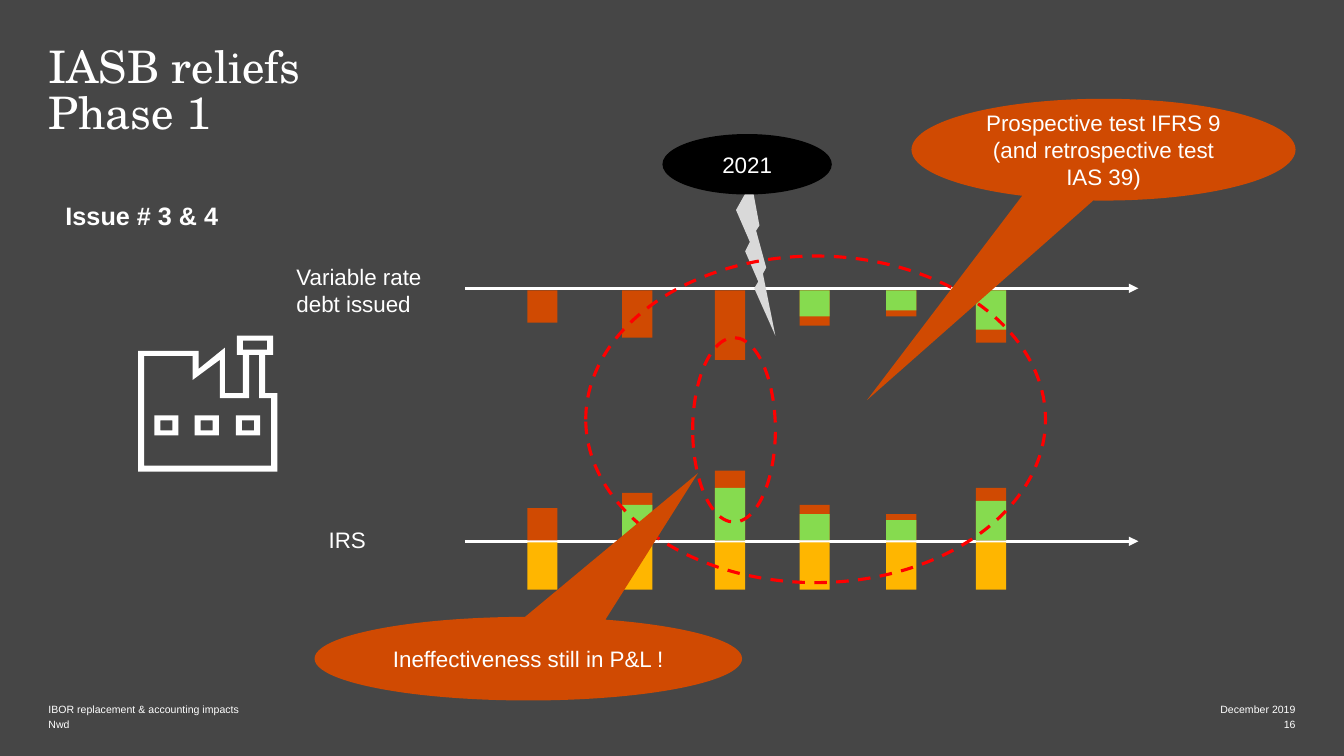
"""Build the slide on reliefs for hedges of variable rate debt."""
from dataclasses import dataclass
from typing import Optional

import pptx
import pptx.util
from lxml import etree
from pptx.dml.color import RGBColor
from pptx.enum.dml import MSO_LINE
from pptx.enum.shapes import MSO_CONNECTOR, MSO_SHAPE
from pptx.enum.text import MSO_ANCHOR, PP_ALIGN
from pptx.oxml.ns import qn
from pptx.util import Inches

WHITE, BLACK, GREY, BACKGROUND = "FFFFFF", "000000", "D9D9D9", "464646"
ORANGE, GREEN, YELLOW, RED = "D04A02", "86DB4F", "FFB600", "FF0000"
BAR_WIDTH = 0.3
DEBT_TOP, SWAP_BOTTOM, FLOATING_TOP, FLOATING_HEIGHT = 2.88, 5.36, 5.38, 0.47


@dataclass
class Box:
    left: float
    top: float
    width: float
    height: float

    def lengths(self) -> tuple:
        return tuple(Inches(v) for v in (self.left, self.top, self.width, self.height))


@dataclass
class Label:
    text: str
    box: Box
    size: float
    font: str = "Arial"
    bold: bool = False
    align: PP_ALIGN = PP_ALIGN.LEFT
    anchor: MSO_ANCHOR = MSO_ANCHOR.TOP
    spacing: float = 1.0


@dataclass
class Period:
    left: float
    cash_flow: float
    hedged_debt: float = 0
    hedged_swap: float = 0


@dataclass
class Bubble:
    text: str
    box: Box
    color: str
    tip: Optional[tuple] = None


def footer(text: str, left: float, top: float, width: float, align: PP_ALIGN) -> Label:
    return Label(text, Box(left, top, width, 0.15), 7.5, align=align, anchor=MSO_ANCHOR.BOTTOM)


LABELS = [
    Label("IASB reliefs\vPhase 1", Box(0.48, 0.47, 12.36, 1.52), 32, "TeX Gyre Schola", spacing=0.85),
    Label("Issue # 3 & 4", Box(0.65, 1.99, 2.73, 0.3), 18, bold=True),
    Label("Variable rate debt issued", Box(2.94, 2.61, 1.51, 0.54), 16),
    Label("IRS", Box(3.26, 5.22, 1.51, 0.27), 16),
    footer("IBOR replacement & accounting impacts", 0.48, 6.95, 5.99, PP_ALIGN.LEFT),
    footer("Nwd", 0.48, 7.1, 5.99, PP_ALIGN.LEFT),
    footer("December 2019", 10.92, 6.95, 1.93, PP_ALIGN.RIGHT),
    footer("16", 10.92, 7.1, 1.93, PP_ALIGN.RIGHT),
]
PERIODS = [
    Period(5.23, 0.32),
    Period(6.17, 0.47, hedged_swap=0.35),
    Period(7.09, 0.69, hedged_swap=0.52),
    Period(7.93, 0.35, 0.26, 0.26),
    Period(8.79, 0.26, 0.2, 0.2),
    Period(9.68, 0.52, 0.39, 0.39),
]
REFORM_DATE = Bubble("2021", Box(6.57, 1.33, 1.68, 0.6), BLACK)
PROSPECTIVE_TEST = Bubble("Prospective test IFRS 9 (and retrospective test IAS 39)",
                          Box(9.04, 0.98, 3.81, 1.01), ORANGE, (-0.616, 2.461))
INEFFECTIVENESS = Bubble("Ineffectiveness still in P&L !",
                         Box(3.12, 6.12, 4.24, 0.83), ORANGE, (0.397, -2.219))
WALLS = [(2.63, 3.9), (2.63, 3.52), (2.71, 3.52), (2.71, 3.33), (2.35, 3.33), (2.35, 3.52),
         (2.41, 3.52), (2.41, 3.9), (2.23, 3.9), (2.23, 3.45), (1.97, 3.66), (1.97, 3.48),
         (1.37, 3.48), (1.37, 4.68), (2.75, 4.68), (2.75, 3.9)]
INTERIOR = [(2.69, 4.62), (1.43, 4.62), (1.43, 3.53), (1.91, 3.53), (1.91, 3.77), (2.18, 3.57),
            (2.18, 3.95), (2.47, 3.95), (2.47, 3.52), (2.57, 3.52), (2.57, 3.95), (2.69, 3.95)]
WINDOW_LEFTS = (1.53, 1.93, 2.34)


def rgb(color: str) -> RGBColor:
    return RGBColor.from_string(color)


def add_label(slide, label: Label) -> None:
    frame = slide.shapes.add_textbox(*label.box.lengths()).text_frame
    frame.margin_left = frame.margin_right = frame.margin_top = frame.margin_bottom = 0
    frame.word_wrap = True
    frame.vertical_anchor = label.anchor
    frame.text = label.text
    paragraph = frame.paragraphs[0]
    paragraph.alignment = label.align
    paragraph.line_spacing = label.spacing
    set_font(paragraph, label.size, label.font, label.bold)


def set_font(paragraph, size: float, name: str = "Arial", bold: bool = False) -> None:
    paragraph.font.size = pptx.util.Pt(size)
    paragraph.font.name = name
    paragraph.font.bold = bold
    paragraph.font.color.rgb = rgb(WHITE)


def paint(shape, color: str) -> None:
    shape.shadow.inherit = False
    shape.fill.solid()
    shape.fill.fore_color.rgb = rgb(color)
    shape.line.fill.background()


def add_filled(slide, preset: MSO_SHAPE, box: Box, color: str):
    shape = slide.shapes.add_shape(preset, *box.lengths())
    paint(shape, color)
    return shape


def add_bubble(slide, bubble: Bubble) -> None:
    preset = MSO_SHAPE.OVAL_CALLOUT if bubble.tip else MSO_SHAPE.OVAL
    shape = add_filled(slide, preset, bubble.box, bubble.color)
    for index, offset in enumerate(bubble.tip or ()):
        shape.adjustments[index] = offset
    frame = shape.text_frame
    frame.word_wrap = True
    frame.vertical_anchor = MSO_ANCHOR.MIDDLE
    frame.text = bubble.text
    frame.paragraphs[0].alignment = PP_ALIGN.CENTER
    set_font(frame.paragraphs[0], 16)


def add_time_axis(slide, height: float) -> None:
    axis = slide.shapes.add_connector(MSO_CONNECTOR.STRAIGHT, Inches(4.61), Inches(height),
                                      Inches(11.29), Inches(height))
    axis.line.color.rgb = rgb(WHITE)
    axis.line.width = pptx.util.Pt(2.25)
    etree.SubElement(axis.line._get_or_add_ln(), qn("a:tailEnd"), type="triangle")
    etree.SubElement(axis._element.spPr, qn("a:effectLst"))


def add_dashed_oval(slide, box: Box) -> None:
    oval = slide.shapes.add_shape(MSO_SHAPE.OVAL, *box.lengths())
    oval.shadow.inherit = False
    oval.fill.background()
    oval.line.color.rgb = rgb(RED)
    oval.line.width = pptx.util.Pt(2.25)
    oval.line.dash_style = MSO_LINE.DASH


def rectangle(left: float, top: float, right: float, bottom: float) -> list:
    return [(left, bottom), (right, bottom), (right, top), (left, top)]


def add_factory(slide) -> None:
    outlines = [WALLS, INTERIOR, rectangle(2.41, 3.38, 2.65, 3.47)]
    for left in WINDOW_LEFTS:
        outlines.append(rectangle(left, 4.12, left + 0.24, 4.32))
        outlines.append(rectangle(left + 0.06, 4.17, left + 0.18, 4.27))
    contours = [[(Inches(x), Inches(y)) for x, y in outline] for outline in outlines]
    builder = slide.shapes.build_freeform(*contours[0][0])
    for contour in contours:
        builder.move_to(*contour[0])
        builder.add_line_segments(contour[1:])
    paint(builder.convert_to_shape(), WHITE)


def add_period(slide, period: Period) -> None:
    bars = [
        (DEBT_TOP, period.cash_flow, ORANGE),
        (DEBT_TOP, period.hedged_debt, GREEN),
        (FLOATING_TOP, FLOATING_HEIGHT, YELLOW),
        (SWAP_BOTTOM - period.cash_flow, period.cash_flow, ORANGE),
        (SWAP_BOTTOM - period.hedged_swap, period.hedged_swap, GREEN),
    ]
    for top, height, color in bars:
        if height:
            add_filled(slide, MSO_SHAPE.RECTANGLE, Box(period.left, top, BAR_WIDTH, height), color)


def main() -> None:
    deck = pptx.Presentation()
    deck.slide_width, deck.slide_height = Inches(13.33), Inches(7.5)
    slide = deck.slides.add_slide(deck.slide_layouts[6])
    slide.background.fill.solid()
    slide.background.fill.fore_color.rgb = rgb(BACKGROUND)
    for label in LABELS:
        add_label(slide, label)
    add_factory(slide)
    for height in (2.86, 5.37):
        add_time_axis(slide, height)
    for period in PERIODS:
        add_period(slide, period)
    add_filled(slide, MSO_SHAPE.LIGHTNING_BOLT, Box(7.3, 1.81, 0.39, 1.52), GREY)
    add_bubble(slide, REFORM_DATE)
    add_dashed_oval(slide, Box(5.81, 2.54, 4.56, 3.24))
    add_bubble(slide, PROSPECTIVE_TEST)
    add_dashed_oval(slide, Box(6.87, 3.35, 0.82, 1.83))
    add_bubble(slide, INEFFECTIVENESS)
    deck.save("out.pptx")


if __name__ == "__main__":
    main()
